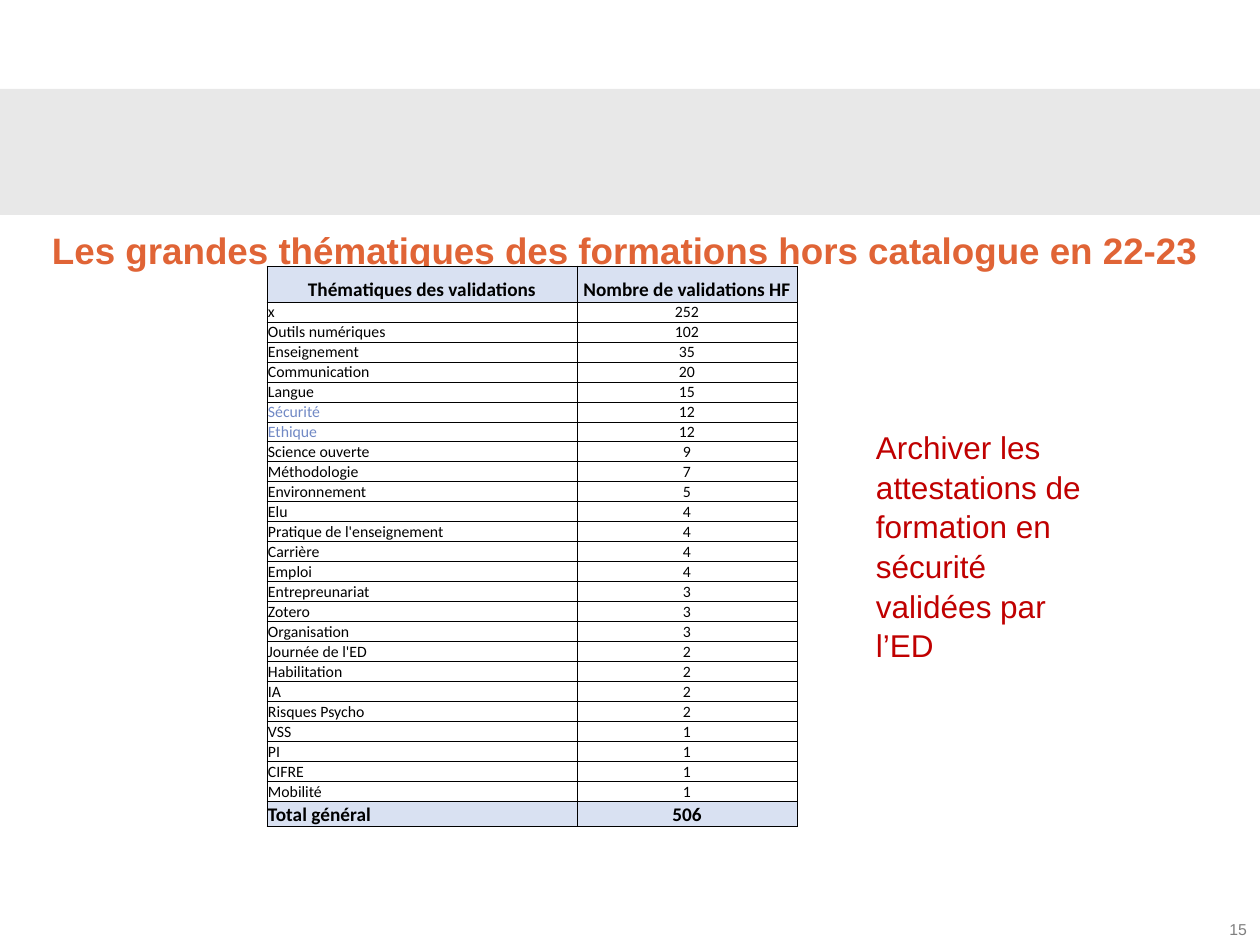
from typing import NamedTuple, Optional

from lxml import etree
from pptx import Presentation, util as u
from pptx.dml.color import RGBColor
from pptx.enum import shapes, text
from pptx.oxml.ns import qn

PX_PER_INCH = 126
BLACK, HEADER_BLUE = "000000", "D9E1F2"
LEFT, CENTER, RIGHT = text.PP_ALIGN.LEFT, text.PP_ALIGN.CENTER, text.PP_ALIGN.RIGHT


class Row(NamedTuple):
    theme: str
    count: str
    height: int = 20
    size: int = 9
    bold: bool = False
    fill: Optional[str] = None
    theme_color: str = BLACK
    theme_align: text.PP_ALIGN = LEFT


THEMES = [
    ("x", 252), ("Outils numériques", 102), ("Enseignement", 35),
    ("Communication", 20), ("Langue", 15), ("Sécurité", 12), ("Ethique", 12),
    ("Science ouverte", 9), ("Méthodologie", 7), ("Environnement", 5),
    ("Elu", 4), ("Pratique de l'enseignement", 4), ("Carrière", 4),
    ("Emploi", 4), ("Entrepreunariat", 3), ("Zotero", 3),
    ("Organisation", 3), ("Journée de l'ED", 2), ("Habilitation", 2),
    ("IA", 2), ("Risques Psycho", 2), ("VSS", 1), ("PI", 1), ("CIFRE", 1),
    ("Mobilité", 1),
]
HIGHLIGHTED = {"Sécurité", "Ethique"}
ROWS = [
    Row("Thématiques des validations", "Nombre de validations HF", 36, 11, True,
        HEADER_BLUE, theme_align=CENTER),
    *(Row(theme, str(count), theme_color="7189C5" if theme in HIGHLIGHTED else BLACK)
      for theme, count in THEMES),
    Row("Total général", str(sum(count for _, count in THEMES)), 25, 11, True,
        HEADER_BLUE),
]


def px(length: int) -> int:
    return round(length * u.Inches(1) / PX_PER_INCH)


def box(left: int, top: int, width: int, height: int) -> tuple:
    return px(left), px(top), px(width), px(height)


def rgb(color: str) -> RGBColor:
    return RGBColor.from_string(color)


def write(frame, words: str, *, size: int, color: str, font: str = "Arial",
          bold: bool = False, align=LEFT, anchor=text.MSO_ANCHOR.TOP,
          wrap: bool = True, spacing: float = 1.0, margins=(13, 6, 13, 6)) -> None:
    frame.word_wrap = wrap
    frame.vertical_anchor = anchor
    (frame.margin_left, frame.margin_top,
     frame.margin_right, frame.margin_bottom) = map(px, margins)
    paragraph = frame.paragraphs[0]
    paragraph.alignment = align
    paragraph.line_spacing = spacing
    run = paragraph.add_run()
    run.text = words
    run.font.name, run.font.size, run.font.bold = font, u.Pt(size), bold
    run.font.color.rgb = rgb(color)


def add_borders(cell) -> None:
    properties = cell._tc.get_or_add_tcPr()
    for side in ("a:lnL", "a:lnR", "a:lnT", "a:lnB"):
        line = etree.SubElement(properties, qn(side), w=str(u.Pt(0.5)))
        fill = etree.SubElement(line, qn("a:solidFill"))
        etree.SubElement(fill, qn("a:srgbClr"), val=BLACK)


def fill_cell(cell, words: str, row: Row, color: str, align) -> None:
    cell.margin_left = cell.margin_top = cell.margin_right = px(1)
    cell.margin_bottom = 0
    cell.vertical_anchor = text.MSO_ANCHOR.BOTTOM
    paragraph = cell.text_frame.paragraphs[0]
    paragraph.alignment = align
    run = paragraph.add_run()
    run.text = words
    run.font.name, run.font.size, run.font.bold = "Calibri", u.Pt(row.size), row.bold
    run.font.color.rgb = rgb(color)
    add_borders(cell)
    if row.fill:
        cell.fill.solid()
        cell.fill.fore_color.rgb = rgb(row.fill)
    else:
        cell.fill.background()


def add_themes_table(slide, rows: list[Row]) -> None:
    widths = (310, 220)
    table = slide.shapes.add_table(
        len(rows), 2,
        *box(267, 266, sum(widths), sum(row.height for row in rows))).table
    table.first_row = table.horz_banding = False
    for column, width in zip(table.columns, widths):
        column.width = px(width)
    for index, row in enumerate(rows):
        table.rows[index].height = px(row.height)
        fill_cell(table.cell(index, 0), row.theme, row, row.theme_color, row.theme_align)
        fill_cell(table.cell(index, 1), row.count, row, BLACK, CENTER)


def main() -> None:
    prs = Presentation()
    prs.slide_width, prs.slide_height = u.Inches(10), u.Inches(7.5)
    slide = prs.slides.add_slide(prs.slide_layouts[5])

    # Grey band
    band = slide.shapes.add_shape(shapes.MSO_SHAPE.RECTANGLE, *box(-1, 89, 1261, 126))
    band.shadow.inherit = False
    band.fill.solid()
    band.fill.fore_color.rgb = rgb("D9D9D9")
    band_color = band.fill._xPr.find(qn("a:solidFill"))[0]
    etree.SubElement(band_color, qn("a:alpha"), val="59000")
    band.line.fill.background()

    # Page number
    page = slide.shapes.add_textbox(*box(1215, 914, 45, 31))
    write(page.text_frame, "15", size=9, color="7F7F7F", align=RIGHT, wrap=False)

    # Title
    title = slide.shapes.title
    title.left, title.top, title.width, title.height = box(39, 217, 1182, 74)
    write(title.text_frame, "Les grandes thématiques des formations hors catalogue en 22-23",
          size=21, color="E06436", bold=True, margins=(13, 11, 13, 6))

    # Validations by theme
    add_themes_table(slide, ROWS)

    # Reminder beside the table
    reminder = slide.shapes.add_textbox(*box(867, 421, 223, 238))
    write(reminder.text_frame,
          "Archiver les attestations de formation en sécurité validées par l’ED",
          size=18, color="C00000", spacing=1.05, margins=(9, 5, 9, 5))

    prs.save("out.pptx")


if __name__ == "__main__":
    main()
